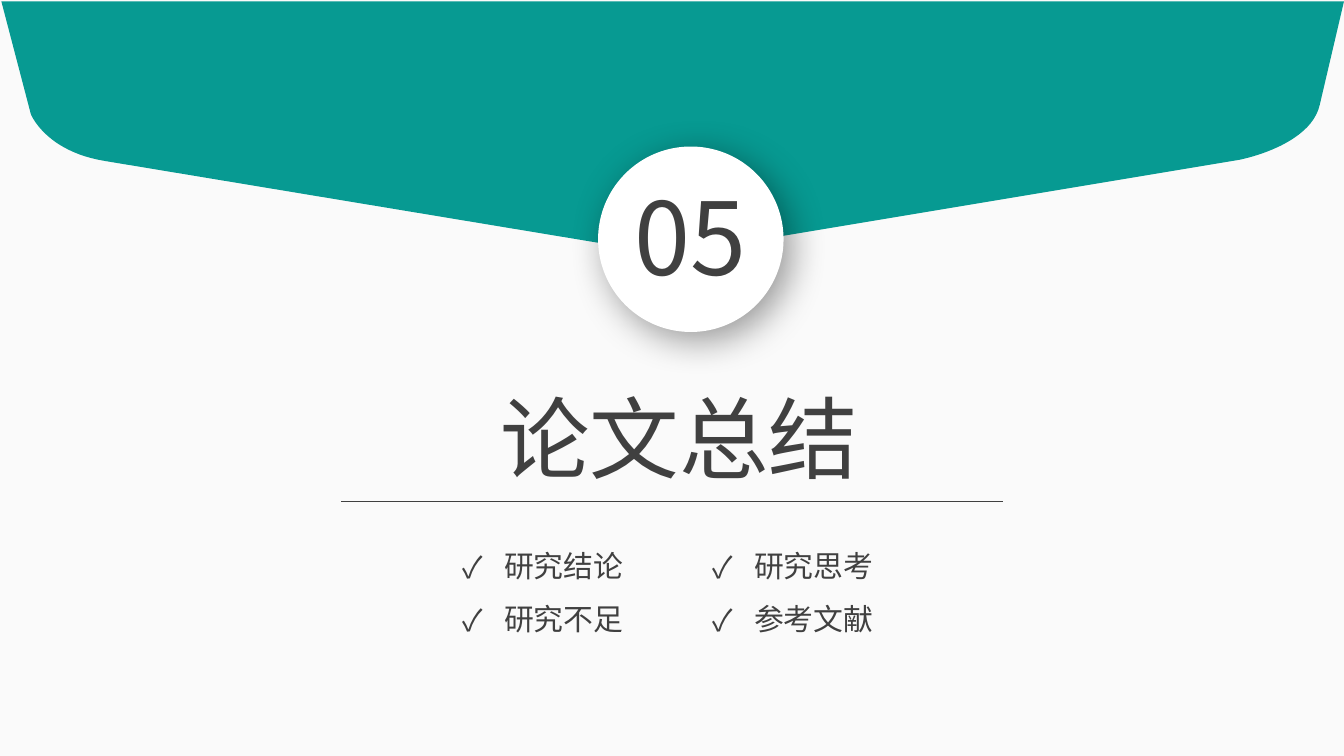
from lxml import etree
from pptx import Presentation
from pptx.dml.color import RGBColor
from pptx.enum.shapes import MSO_CONNECTOR, MSO_SHAPE
from pptx.enum.text import MSO_ANCHOR, MSO_AUTO_SIZE, PP_ALIGN
from pptx.oxml.ns import qn
from pptx.util import Inches, Pt

STRAIGHT = MSO_CONNECTOR.STRAIGHT
OVAL = MSO_SHAPE.OVAL
TOP = MSO_ANCHOR.TOP
FIT_SHAPE = MSO_AUTO_SIZE.SHAPE_TO_FIT_TEXT
CENTER = PP_ALIGN.CENTER

WIDTH = 10
HEIGHT = WIDTH * 9 / 16
TITLE_ONLY = 5
FONT = "Noto Sans CJK SC"
COLORS = {"background": "FAFAFA", "banner": "079A92", "badge": "FFFFFF",
          "text": "404040", "shadow": "000000"}

# Each cubic curve: start, two control points, end
LEFT_CORNER = [(0.23, 0.85), (0.23, 0.85), (0.34, 1.13), (0.79, 1.2)]
BOTTOM_TIP = [(4.53, 1.82), (4.53, 1.82), (4.95, 1.9), (5.44, 1.82)]
RIGHT_CORNER = [(9.22, 1.19), (9.22, 1.19), (9.75, 1.09), (9.82, 0.78)]

LIST_LEFT, LIST_STEP = 3.34, 1.86
BULLET_INDENT = Pt(22.5)
TOPICS = [["研究结论", "研究不足"], ["研究思考", "参考文献"]]


def color(name):
    return RGBColor.from_string(COLORS[name])


def box(left, top, width, height):
    return [Inches(value) for value in (left, top, width, height)]


def curve_points(controls, steps=24):
    """Points along a cubic Bezier curve."""
    points = []
    for step in range(steps + 1):
        t = step / steps
        weights = [(1 - t) ** 3, 3 * t * (1 - t) ** 2, 3 * t * t * (1 - t), t ** 3]
        points.append(tuple(sum(weight * point[axis] for weight, point in zip(weights, controls))
                            for axis in (0, 1)))
    return points


def fill_plain(shape, name):
    shape.shadow.inherit = False
    shape.fill.solid()
    shape.fill.fore_color.rgb = color(name)
    shape.line.fill.background()


def add_banner(slide):
    outline = [point for curve in (LEFT_CORNER, BOTTOM_TIP, RIGHT_CORNER)
               for point in curve_points(curve)] + [(WIDTH, 0.01)]
    builder = slide.shapes.build_freeform(Inches(0.01), Inches(0.01))
    builder.add_line_segments([(Inches(x), Inches(y)) for x, y in outline], close=True)
    fill_plain(builder.convert_to_shape(), "banner")


def add_badge(slide):
    badge = slide.shapes.add_shape(OVAL, *box(4.45, 1.09, 1.38, 1.38))
    fill_plain(badge, "badge")
    effects = badge._element.spPr.find(qn("a:effectLst"))
    shadow = etree.SubElement(effects, qn("a:outerShdw"), blurRad=str(Pt(20)), dist=str(Pt(6)),
                              dir=str(45 * 60000), algn="tl", rotWithShape="0")
    shade = etree.SubElement(shadow, qn("a:srgbClr"), val=COLORS["shadow"])
    etree.SubElement(shade, qn("a:alpha"), val="40000")


def add_run(paragraph, text, size):
    run = paragraph.add_run()
    run.text = text
    run.font.size = Pt(size)
    run.font.color.rgb = color("text")
    run.font.name = FONT
    etree.SubElement(run._r.get_or_add_rPr(), qn("a:ea"), typeface=FONT)


def prepare_frame(shape):
    frame = shape.text_frame
    frame.word_wrap = True
    frame.auto_size = FIT_SHAPE
    frame.vertical_anchor = TOP
    return frame


def add_heading(shape, text, size):
    paragraph = prepare_frame(shape).paragraphs[0]
    paragraph.alignment = CENTER
    add_run(paragraph, text, size)


def add_title(slide, text):
    title = slide.shapes.title
    title.left, title.top, title.width, title.height = box(2.11, 2.8, 5.89, 0.91)
    add_heading(title, text, 48)


def add_rule(slide, margin, top):
    rule = slide.shapes.add_connector(STRAIGHT, Inches(margin), Inches(top),
                                      Inches(WIDTH - margin), Inches(top))
    rule.line.color.rgb = color("text")
    rule.line.width = Pt(0.5)
    etree.SubElement(rule._element.spPr, qn("a:effectLst"))


def add_checklist(slide, left, items):
    frame = prepare_frame(slide.shapes.add_textbox(*box(left, 3.89, 1.7, 0.91)))
    for index, item in enumerate(items):
        paragraph = frame.add_paragraph() if index else frame.paragraphs[0]
        paragraph.line_spacing = 1.5
        properties = paragraph._p.get_or_add_pPr()
        properties.set("marL", str(BULLET_INDENT))
        properties.set("indent", str(-BULLET_INDENT))
        etree.SubElement(properties, qn("a:buFont"), typeface=FONT)
        etree.SubElement(properties, qn("a:buChar"), char="✓")
        add_run(paragraph, item, 16)


def main():
    presentation = Presentation()
    presentation.slide_width, presentation.slide_height = Inches(WIDTH), Inches(HEIGHT)
    slide = presentation.slides.add_slide(presentation.slide_layouts[TITLE_ONLY])
    slide.background.fill.solid()
    slide.background.fill.fore_color.rgb = color("background")

    add_banner(slide)
    add_badge(slide)
    add_heading(slide.shapes.add_textbox(*box(4.52, 1.25, 1.23, 1.01)), "05", 54)
    add_title(slide, "论文总结")
    add_rule(slide, 2.54, 3.73)
    for column, items in enumerate(TOPICS):
        add_checklist(slide, LIST_LEFT + column * LIST_STEP, items)

    presentation.save("out.pptx")


if __name__ == "__main__":
    main()
